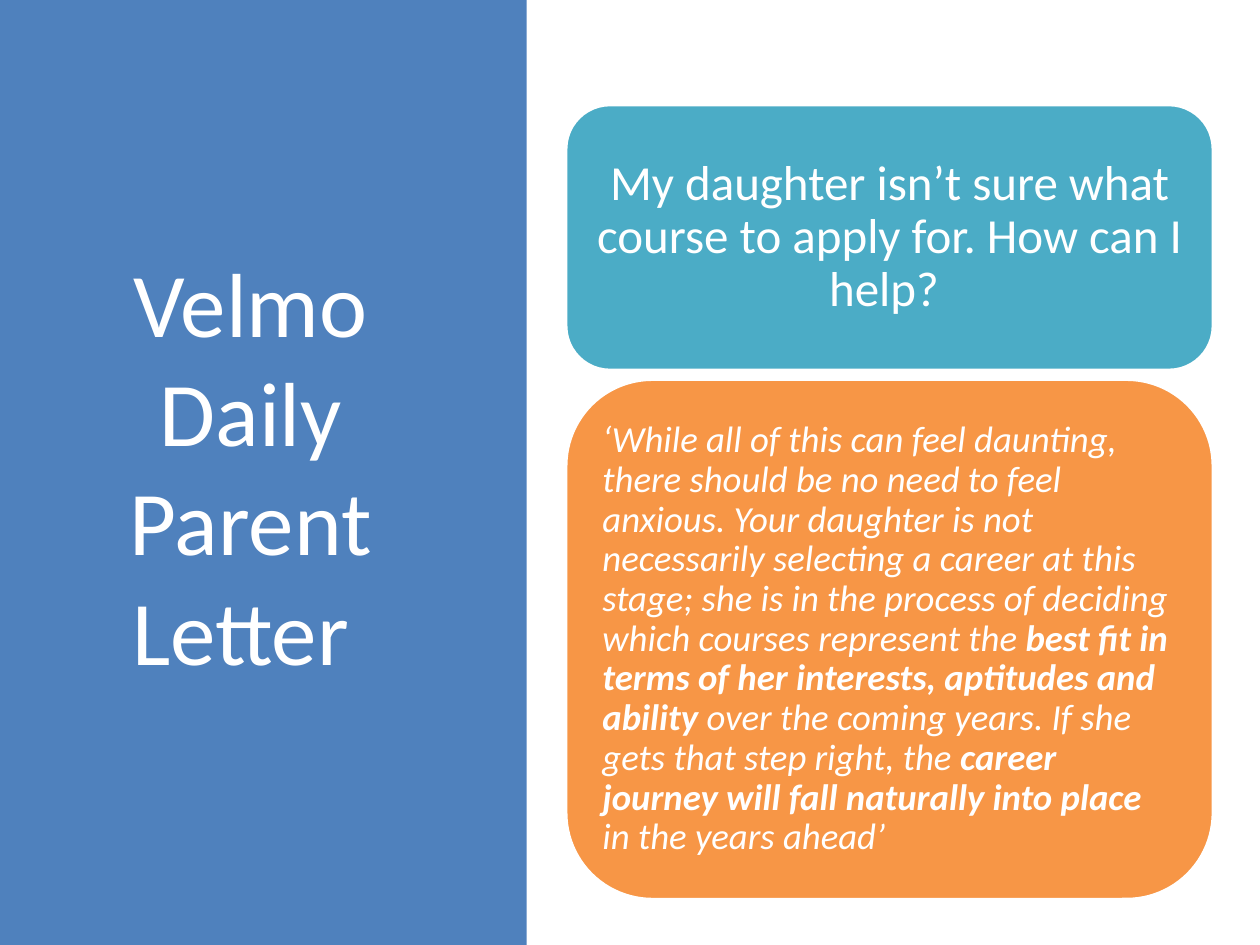
import pptx
import pptx.util
import pptx.dml.color
import pptx.enum.shapes
import pptx.enum.text

Inches = pptx.util.Inches
Shapes = pptx.enum.shapes.MSO_SHAPE
Align = pptx.enum.text.PP_ALIGN

THEME = {
    "font": "Calibri",
    "white": "FFFFFF", "panel": "4F81BD", "question": "4BACC6", "answer": "F79646",
    "title_size": 52, "question_size": 28, "answer_size": 21,
    "outline": 2,
}

# Content: each run is (text, bold)
TITLE = [("Velmo Daily Parent Letter ", False)]
QUESTION = [("My daughter isn’t sure what course to apply for. How can I help? ", False)]
ANSWER = [
    ("‘While all of this can feel daunting, there should be no need to feel anxious. "
     "Your daughter is not necessarily selecting a career at this stage; she is in the "
     "process of deciding which courses represent the ", False),
    ("best fit in terms of her interests, aptitudes and ability", True),
    (" over the coming years. If she gets that step right, the ", False),
    ("career journey will fall naturally into place", True),
    (" in the years ahead’", False),
]

# Letter cards, top to bottom
CARDS = [
    {"role": "question", "runs": QUESTION, "height": 2.11, "inset": 0.12,
     "align": Align.CENTER, "italic": None},
    {"role": "answer", "runs": ANSWER, "height": 4.13, "inset": 0.09,
     "align": Align.LEFT, "italic": True},
]
CARD_LEFT, CARD_TOP, CARD_WIDTH, CARD_GAP = 4.49, 0.83, 5.14, 0.07


def color(name):
    return pptx.dml.color.RGBColor.from_string(THEME[name])


def add_block(slide, kind, box, fill):
    block = slide.shapes.add_shape(kind, *map(Inches, box))
    block.shadow.inherit = False
    block.fill.solid()
    block.fill.fore_color.rgb = color(fill)
    block.line.fill.background()
    return block


def write(frame, runs, size, align, inset=None, italic=None, spacing=None):
    frame.word_wrap = True
    frame.vertical_anchor = pptx.enum.text.MSO_ANCHOR.MIDDLE
    if inset is not None:
        frame.margin_left = frame.margin_right = Inches(inset)
        frame.margin_top = frame.margin_bottom = Inches(inset)
    paragraph = frame.paragraphs[0]
    paragraph.alignment = align
    paragraph.line_spacing = spacing
    for text, bold in runs:
        run = paragraph.add_run()
        run.text = text
        run.font.name = THEME["font"]
        run.font.size = pptx.util.Pt(THEME[size])
        run.font.color.rgb = color("white")
        run.font.bold = bold
        run.font.italic = italic


def main():
    deck = pptx.Presentation()
    deck.slide_width, deck.slide_height = Inches(10), Inches(7.5)
    slide = deck.slides.add_slide(deck.slide_layouts[6])

    # Title panel
    add_block(slide, Shapes.RECTANGLE, (0, 0, 4.18, 7.5), "panel")
    title = slide.shapes.add_textbox(*map(Inches, (0.43, 0.68, 3.12, 6.02)))
    write(title.text_frame, TITLE, "title_size", Align.CENTER)

    # Question and answer cards
    top = CARD_TOP
    for card in CARDS:
        box = (CARD_LEFT, top, CARD_WIDTH, card["height"])
        block = add_block(slide, Shapes.ROUNDED_RECTANGLE, box, card["role"])
        block.line.color.rgb = color("white")
        block.line.width = pptx.util.Pt(THEME["outline"])
        write(block.text_frame, card["runs"], card["role"] + "_size", card["align"],
              card["inset"], card["italic"], spacing=0.9)
        top += card["height"] + CARD_GAP

    deck.save("out.pptx")


if __name__ == "__main__":
    main()
